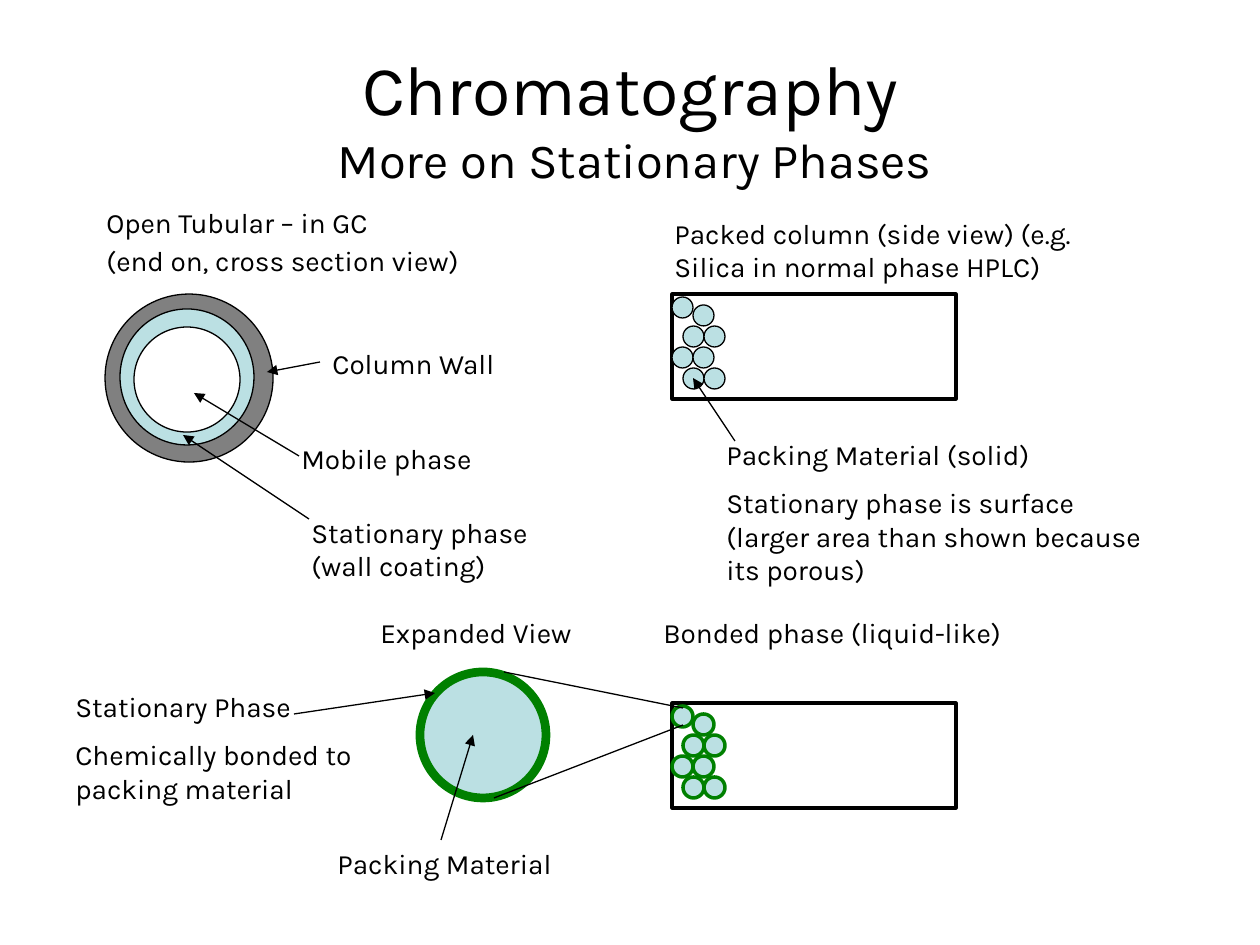
from pptx import Presentation, util as u
from pptx.dml.color import RGBColor
from pptx.enum import shapes, text
from pptx.oxml.ns import qn
from lxml import etree

EMU_PER_PX = 914400 / 126
BLACK, WHITE, GRAY, AQUA, GREEN = "000000", "FFFFFF", "808080", "BBE0E3", "008000"
OVAL, BOX = shapes.MSO_SHAPE.OVAL, shapes.MSO_SHAPE.RECTANGLE


def px(*lengths):
    return [u.Emu(round(length * EMU_PER_PX)) for length in lengths]


def color(value):
    return RGBColor.from_string(value)


class Diagram:
    font = "Karla"
    body_size = 16
    thin = 0.75

    def __init__(self, slide):
        self.slide = slide

    def run(self, paragraph, words, size):
        run = paragraph.add_run()
        run.text = words
        run.font.name = self.font
        run.font.size = u.Pt(size)
        run.font.color.rgb = color(BLACK)

    def title(self, place, heading, subtitle):
        shape = self.slide.shapes.title
        shape.left, shape.top, shape.width, shape.height = px(*place)
        frame = shape.text_frame
        frame.word_wrap = True
        frame.vertical_anchor = text.MSO_ANCHOR.MIDDLE
        paragraph = frame.paragraphs[0]
        paragraph.alignment = text.PP_ALIGN.CENTER
        self.run(paragraph, heading, 40)
        paragraph.add_line_break()
        self.run(paragraph, " ", 22)
        self.run(paragraph, subtitle, 28)

    def label(self, place, *lines, gap=8.5):
        frame = self.slide.shapes.add_textbox(*px(*place)).text_frame
        frame.word_wrap = True
        frame.auto_size = text.MSO_AUTO_SIZE.SHAPE_TO_FIT_TEXT
        for index, line in enumerate(lines):
            paragraph = frame.add_paragraph() if index else frame.paragraphs[0]
            if index:
                paragraph.space_before = u.Pt(gap)
            self.run(paragraph, line, self.body_size)

    def shape(self, kind, place, fill=None, line=BLACK, weight=thin):
        shape = self.slide.shapes.add_shape(kind, *px(*place))
        shape.shadow.inherit = False
        if fill:
            shape.fill.solid()
            shape.fill.fore_color.rgb = color(fill)
        else:
            shape.fill.background()
        shape.line.color.rgb = color(line)
        shape.line.width = u.Pt(weight)

    def line(self, start, end, arrow=True):
        connector = self.slide.shapes.add_connector(
            shapes.MSO_CONNECTOR.STRAIGHT, *px(*start, *end))
        connector.line.color.rgb = color(BLACK)
        connector.line.width = u.Pt(self.thin)
        properties = connector._element.spPr
        if arrow:
            outline = properties.find(qn("a:ln"))
            etree.SubElement(outline, qn("a:tailEnd"), type="triangle")
        etree.SubElement(properties, qn("a:effectLst"))

    def packed_column(self, left, top, bead_line, bead_weight):
        self.shape(BOX, (left, top, 284, 105), weight=1.75)
        beads = [(11, 74), (0, 53), (21, 53), (11, 32),
                 (32, 74), (32, 32), (21, 11), (0, 3)]
        for x, y in beads:
            self.shape(OVAL, (left + x, top + y, 21, 21),
                       AQUA, bead_line, bead_weight)


def main():
    presentation = Presentation()
    presentation.slide_width, presentation.slide_height = px(1260, 945)
    slide = presentation.slides.add_slide(presentation.slide_layouts[5])
    diagram = Diagram(slide)
    diagram.title((63, 38, 1134, 157), "Chromatography", "More on Stationary Phases")

    # Open tubular column, end on
    diagram.shape(OVAL, (105, 294, 168, 168), GRAY)
    diagram.shape(OVAL, (120, 309, 134, 136), AQUA)
    diagram.shape(OVAL, (134, 327, 106, 105), WHITE)
    diagram.label((94, 199, 388, 86), "Open Tubular – in GC",
                  "(end on, cross section view)", gap=2.8)
    diagram.label((320, 340, 220, 47), "Column Wall")
    diagram.line((320, 362), (267, 372))
    diagram.label((289, 435, 252, 47), "Mobile phase")
    diagram.line((299, 456), (194, 393))
    diagram.label((299, 509, 262, 81), "Stationary phase (wall coating)")
    diagram.line((309, 519), (183, 435))

    # Packed column, side view
    diagram.packed_column(672, 294, BLACK, diagram.thin)
    diagram.label((662, 210, 472, 81),
                  "Packed column (side view) (e.g. Silica in normal phase HPLC)")
    diagram.label((714, 431, 451, 164), "Packing Material (solid)",
                  "Stationary phase is surface (larger area than shown because its porous)")
    diagram.line((735, 441), (693, 378))

    # Bonded phase column
    diagram.packed_column(672, 703, GREEN, 2)
    diagram.label((651, 609, 410, 47), "Bonded phase (liquid-like)")

    # Expanded view of one bead
    diagram.shape(OVAL, (420, 672, 126, 126), AQUA, GREEN, 5)
    diagram.line((683, 708), (504, 672), arrow=False)
    diagram.line((683, 725), (494, 798), arrow=False)
    diagram.label((368, 609, 252, 47), "Expanded View")
    diagram.label((63, 683, 325, 131), "Stationary Phase",
                  "Chemically bonded to packing material")
    diagram.line((294, 714), (435, 693))
    diagram.label((325, 840, 284, 47), "Packing Material")
    diagram.line((441, 840), (473, 735))

    presentation.save("out.pptx")


if __name__ == "__main__":
    main()
